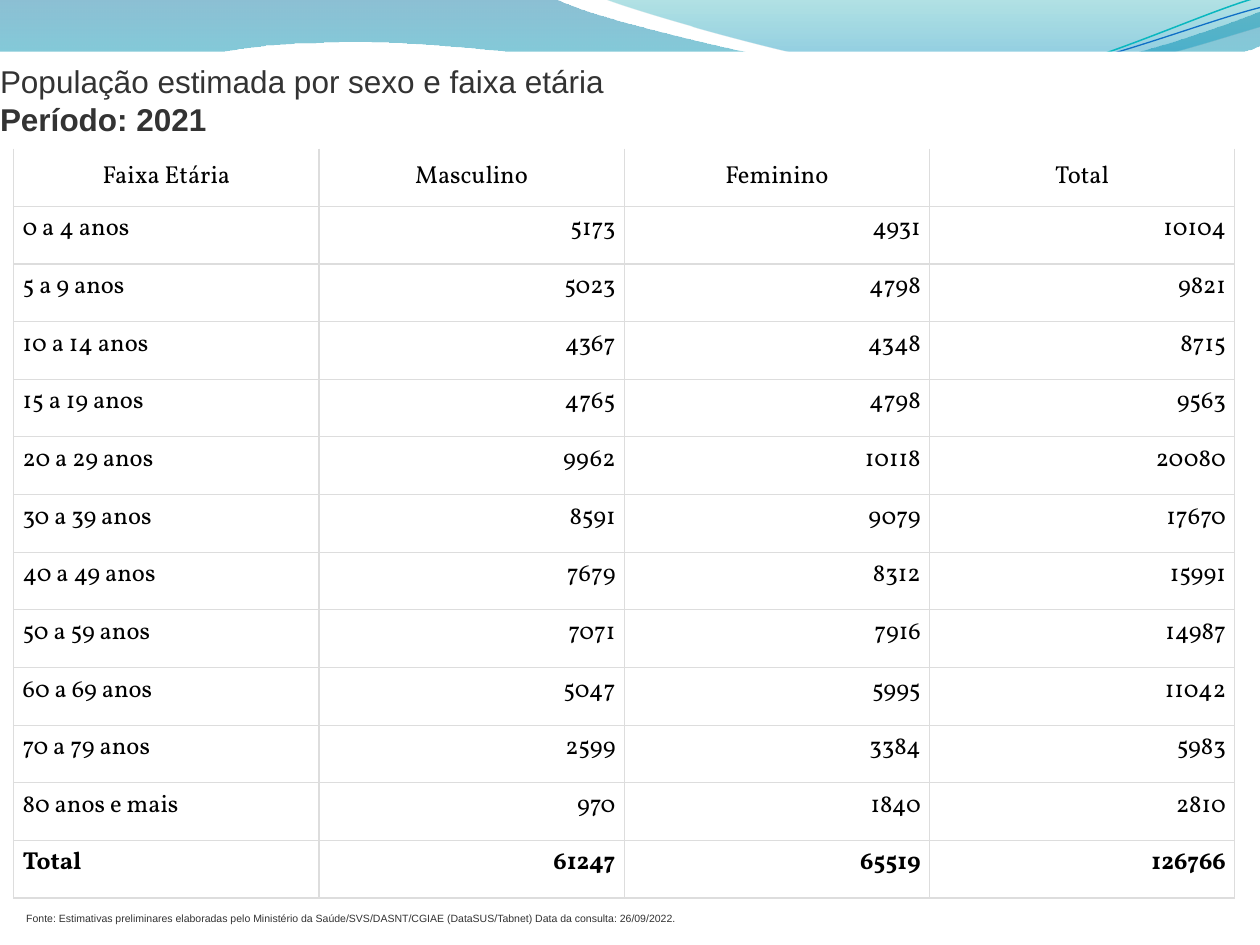
from lxml import etree
from pptx import Presentation
from pptx.dml.color import RGBColor
from pptx.enum.text import MSO_ANCHOR as Anchor, PP_ALIGN as Align
from pptx.oxml import parse_xml
from pptx.oxml.ns import nsdecls, qn
from pptx.util import Inches, Pt

HEADINGS = ["Faixa Etária", "Masculino", "Feminino", "Total"]
POPULATION = [
    ("0 a 4 anos", 5173, 4931, 10104),
    ("5 a 9 anos", 5023, 4798, 9821),
    ("10 a 14 anos", 4367, 4348, 8715),
    ("15 a 19 anos", 4765, 4798, 9563),
    ("20 a 29 anos", 9962, 10118, 20080),
    ("30 a 39 anos", 8591, 9079, 17670),
    ("40 a 49 anos", 7679, 8312, 15991),
    ("50 a 59 anos", 7071, 7916, 14987),
    ("60 a 69 anos", 5047, 5995, 11042),
    ("70 a 79 anos", 2599, 3384, 5983),
    ("80 anos e mais", 970, 1840, 2810),
    ("Total", 61247, 65519, 126766),
]

# Each wave is a start point, then lines (one point) and cubic curves (three points)
LEFT_WAVE = [
    (0, 0), [(4.4, -0.01)],
    [(4.76, 0.17), (6.64, 0.63), (7.58, 0.63)],
    [(8.53, 0.63), (9.58, 0.26), (10, 0.09)],
    [(10.01, 0.36)],
    [(9.83, 0.44), (8.7, 0.76), (7.46, 0.75)],
    [(6.22, 0.75), (3.82, 0.28), (2.57, 0.34)],
    [(1.29, 0.35), (0.46, 0.83), (-0.01, 1.13)],
]
RIGHT_WAVE = [
    (4.79, -0.01),
    [(5.09, 0.11), (6.82, 0.62), (7.69, 0.65)],
    [(8.56, 0.69), (9.61, 0.32), (10, 0.21)],
    [(10, 0)],
]
TEAL_LINE = [
    (0, 1.11),
    [(0.48, 0.93), (1.58, 0.57), (2.77, 0.52)],
    [(3.95, 0.46), (5.93, 0.89), (7.13, 0.8)],
    [(8.33, 0.71), (9.38, 0.15), (9.98, -0.02)],
]
BLUE_LINE = [
    (0, 1.04),
    [(0.47, 0.96), (1.64, 0.61), (2.83, 0.56)],
    [(4.03, 0.51), (5.97, 0.83), (7.17, 0.75)],
    [(8.36, 0.67), (9.41, 0.21), (10, 0.06)],
]


def color(value):
    return RGBColor.from_string(value)


class SlideBuilder:
    SANS, SERIF = "Arial", "Vollkorn"
    INK, BLACK, WHITE, BORDER = "333333", "000000", "FFFFFF", "DDDDDD"

    def __init__(self, slide):
        self.slide = slide
        self.shapes = slide.shapes
        self.master = slide.slide_layout.slide_master

    def wave(self, outline, closed):
        """Draw a curved outline and hand it to the slide master."""
        start, *segments = outline
        builder = self.shapes.build_freeform(*map(Inches, start), scale=1.0)
        ends = [tuple(map(Inches, segment[-1])) for segment in segments]
        builder.add_line_segments(ends, close=closed)
        wave = builder.convert_to_shape()
        wave.shadow.inherit = False
        lines = list(wave._element.iter(qn("a:lnTo")))
        for line, segment in zip(lines, segments):
            if len(segment) == 3:
                curve = etree.Element(qn("a:cubicBezTo"))
                for x, y in segment:
                    etree.SubElement(curve, qn("a:pt"), x=str(Inches(x) - wave.left),
                                     y=str(Inches(y) - wave.top))
                line.getparent().replace(line, curve)
        self.master.shapes._spTree.append(wave._element)
        return wave

    def gradient_wave(self, outline, stops, angle):
        wave = self.wave(outline, True)
        wave.line.fill.background()
        wave.fill.background()
        stop_xml = "".join(
            f'<a:gs pos="{pos * 1000}"><a:srgbClr val="{value}">'
            f'<a:alpha val="{opacity * 1000}"/></a:srgbClr></a:gs>'
            for pos, value, opacity in stops)
        gradient = parse_xml(
            f'<a:gradFill {nsdecls("a")} rotWithShape="1"><a:gsLst>{stop_xml}</a:gsLst>'
            f'<a:lin ang="{angle * 60000}" scaled="0"/></a:gradFill>')
        properties = wave._element.spPr
        properties.replace(properties.find(qn("a:noFill")), gradient)

    def line_wave(self, outline, value, width):
        wave = self.wave(outline, False)
        wave.fill.background()
        wave.line.color.rgb = color(value)
        wave.line.width = Pt(width)

    def style(self, paragraph, size, font, value, bold=False):
        for run in paragraph.runs:
            run.font.size = Pt(size)
            run.font.name = font
            run.font.bold = bold
            run.font.color.rgb = color(value)

    def panel(self, shape, box, side, edge):
        """Place a white text panel with its margins."""
        shape.left, shape.top, shape.width, shape.height = map(Inches, box)
        shape.fill.solid()
        shape.fill.fore_color.rgb = color(self.WHITE)
        frame = shape.text_frame
        frame.word_wrap = True
        frame.vertical_anchor = Anchor.MIDDLE
        frame.margin_left = frame.margin_right = Inches(side)
        frame.margin_top = frame.margin_bottom = Inches(edge)
        return frame

    def title(self, lines, box):
        frame = self.panel(self.shapes.title, box, 0, 0.08)
        frame.text = "\n".join(lines)
        for index, paragraph in enumerate(frame.paragraphs):
            paragraph.alignment = Align.LEFT
            self.style(paragraph, 18, self.SANS, self.INK, bold=index == 1)

    def source_note(self, text, box):
        note = self.shapes.add_textbox(*map(Inches, box))
        frame = self.panel(note, box, 0.1, 0.1)
        frame.text = text
        self.style(frame.paragraphs[0], 6, self.SANS, self.INK)

    def borders(self, cell, with_top):
        properties = cell._tc.get_or_add_tcPr()
        for index, side in enumerate("LRTB"):
            border = etree.Element(qn(f"a:ln{side}"), w=str(Pt(0.75)))
            if side == "T" and not with_top:
                etree.SubElement(border, qn("a:noFill"))
            else:
                fill = etree.SubElement(border, qn("a:solidFill"))
                etree.SubElement(fill, qn("a:srgbClr"), val=self.BORDER)
            properties.insert(index, border)

    def table(self, rows, box):
        table = self.shapes.add_table(len(rows), len(rows[0]), *map(Inches, box)).table
        table.first_row = table.horz_banding = False
        for column in table.columns:
            column.width = Inches(box[2] / len(rows[0]))
        for r, values in enumerate(rows):
            table.rows[r].height = Inches(box[3] / len(rows))
            for c, value in enumerate(values):
                cell = table.cell(r, c)
                cell.text = str(value)
                cell.fill.background()
                cell.margin_left = cell.margin_right = Inches(0.07)
                cell.margin_top = cell.margin_bottom = Inches(0.05)
                cell.vertical_anchor = Anchor.TOP if r else Anchor.MIDDLE
                paragraph = cell.text_frame.paragraphs[0]
                body_align = Align.RIGHT if c else Align.LEFT
                paragraph.alignment = body_align if r else Align.CENTER
                self.style(paragraph, 14, self.SERIF, self.BLACK, bold=r == len(rows) - 1)
                self.borders(cell, with_top=r > 0)


def main():
    deck = Presentation()
    deck.slide_width, deck.slide_height = Inches(10), Inches(7.5)
    page = SlideBuilder(deck.slides.add_slide(deck.slide_layouts[5]))

    # Wave band across the top
    page.gradient_wave(LEFT_WAVE, [(0, "0074A0", 45), (100, "00C4CD", 55)], 90)
    page.gradient_wave(RIGHT_WAVE, [(20, "008ABF", 45), (100, "00A0A8", 30)], 270)
    page.line_wave(TEAL_LINE, "09B7BF", 0.85)
    page.line_wave(BLUE_LINE, "0F6FC6", 0.75)

    # Title, population table and source
    page.title(["População estimada por sexo e faixa etária", "Período: 2021"],
               (0, 0.41, 10, 0.77))
    page.table([HEADINGS, *POPULATION], (0.11, 1.18, 9.69, 5.95))
    page.source_note(
        "Fonte: Estimativas preliminares elaboradas pelo Ministério da Saúde/SVS/DASNT/CGIAE "
        "(DataSUS/Tabnet) Data da consulta: 26/09/2022.", (0.11, 7.19, 8.12, 0.2))

    deck.save("out.pptx")


if __name__ == "__main__":
    main()
